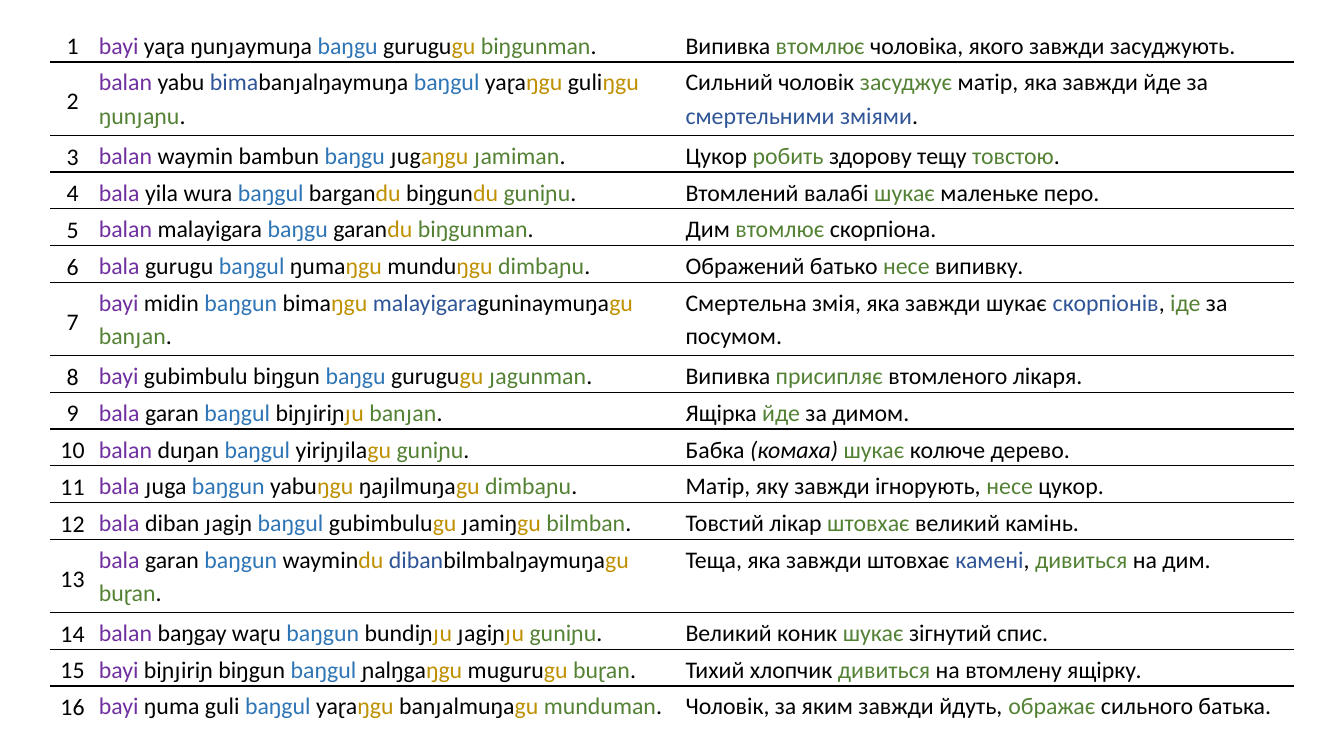
from lxml.etree import SubElement
from pptx import Presentation
from pptx.dml.color import RGBColor
from pptx.enum.text import MSO_ANCHOR as ANCHOR, PP_ALIGN as ALIGN
from pptx.oxml import parse_xml
from pptx.oxml.ns import nsdecls, qn
from pptx.util import Inches, Pt

COLORS = {
    "class": "7030A0",
    "agent": "2E75B6",
    "case": "BF9000",
    "verb": "548235",
    "object": "2F5597",
}
NO_STYLE = "{2D5ABB26-0587-4C30-8999-92F81FD0307C}"
COLUMNS = (0.44, 5.82, 6.07)
CELL_FORMAT = {
    "margin_left": Inches(0.04),
    "margin_right": Inches(0.04),
    "margin_top": Inches(0.02),
    "margin_bottom": 0,
}
PARAGRAPH_FORMAT = {"line_spacing": 1.15, "space_before": Pt(0), "space_after": Pt(2)}
FONT_FORMAT = {"name": "Calibri", "size": Pt(17)}

SENTENCES = [
    (1, "[class:bayi ]yaɽa ŋunɟaymuŋa [agent:baŋgu ]gurugu[case:gu ][verb:biŋgunman].",
     "Випивка [verb:втомлює] чоловіка, якого завжди засуджують."),
    (2, "[class:balan ]yabu [object:bima]banɟalŋaymuŋa [agent:baŋgul ]yaɽa[case:ŋgu ]"
        "guli[case:ŋgu ][verb:ŋunɟaɲu].",
     "Сильний чоловік [verb:засуджує] матір, яка завжди йде за [object:смертельними зміями]."),
    (1, "[class:balan ]waymin bambun [agent:baŋgu ]ɟug[case:aŋgu ][verb:ɟamiman].",
     "Цукор [verb:робить] здорову тещу [verb:товстою]."),
    (1, "[class:bala ]yila wura [agent:baŋgul ]bargan[case:du ]biŋgun[case:du ][verb:guniɲu].",
     "Втомлений валабі [verb:шукає] маленьке перо."),
    (1, "[class:balan ]malayigara [agent:baŋgu ]garan[case:du ][verb:biŋgunman].",
     "Дим [verb:втомлює] скорпіона."),
    (1, "[class:bala ]gurugu [agent:baŋgul ]ŋuma[case:ŋgu ]mundu[case:ŋgu ][verb:dimbaɲu].",
     "Ображений батько [verb:несе] випивку."),
    (2, "[class:bayi ]midin [agent:baŋgun ]bima[case:ŋgu ][object:malayigara]guninaymuŋa"
        "[case:gu ][verb:banɟan].",
     "Смертельна змія, яка завжди шукає [object:скорпіонів], [verb:іде] за посумом."),
    (1, "[class:bayi ]gubimbulu biŋgun [agent:baŋgu ]gurugu[case:gu ][verb:ɟagunman].",
     "Випивка [verb:присипляє] втомленого лікаря."),
    (1, "[class:bala ]garan [agent:baŋgul ]biɲɟiriɲ[case:ɟu ][verb:banɟan].",
     "Ящірка [verb:йде] за димом."),
    (1, "[class:balan ]duŋan [agent:baŋgul ]yiriɲɟila[case:gu ][verb:guniɲu].",
     "Бабка [italic:(комаха) ][verb:шукає] колюче дерево."),
    (1, "[class:bala ]ɟuga [agent:baŋgun ]yabu[case:ŋgu ]ŋaɟilmuŋa[case:gu ][verb:dimbaɲu].",
     "Матір, яку завжди ігнорують, [verb:несе ]цукор."),
    (1, "[class:bala ]diban ɟagiɲ [agent:baŋgul ]gubimbulu[case:gu ]ɟamiŋ[case:gu ]"
        "[verb:bilmban].",
     "Товстий лікар [verb:штовхає] великий камінь."),
    (2, "[class:bala ]garan [agent:baŋgun ]waymin[case:du ][object:diban]bilmbalŋaymuŋa"
        "[case:gu ][verb:buɽan].",
     "Теща, яка завжди штовхає [object:камені], [verb:дивиться] на дим."),
    (1, "[class:balan ]baŋgay waɽu [agent:baŋgun ]bundiɲ[case:ɟu ]ɟagiɲ[case:ɟu ]"
        "[verb:guniɲu].",
     "Великий коник [verb:шукає] зігнутий спис."),
    (1, "[class:bayi ]biɲɟiriɲ biŋgun [agent:baŋgul ]ɲalŋga[case:ŋgu ]muguru[case:gu ]"
        "[verb:buɽan].",
     "Тихий хлопчик [verb:дивиться] на втомлену ящірку."),
    (1, "[class:bayi ]ŋuma guli [agent:baŋgul ]yaɽa[case:ŋgu ]banɟalmuŋa[case:gu ]"
        "[verb:munduman].",
     "Чоловік, за яким завжди йдуть, [verb:ображає] сильного батька."),
]


def rgb(color):
    """Turn a hex string into a colour."""
    return RGBColor.from_string(color)


def apply_format(target, values):
    """Set every attribute in a dict of format values."""
    for name, value in values.items():
        setattr(target, name, value)


def split_marks(text):
    """Yield the role and wording of each part of a marked sentence."""
    for i, part in enumerate(text.replace("]", "[").split("[")):
        if part:
            role, _, words = part.partition(":") if i % 2 else ("", "", part)
            yield role, words


def fill_cell(cell, text, align):
    """Write a marked sentence into a table cell."""
    apply_format(cell, CELL_FORMAT)
    cell.fill.background()
    p = cell.text_frame.paragraphs[0]
    apply_format(p, PARAGRAPH_FORMAT)
    p.alignment = align
    for role, words in split_marks(text):
        r = p.add_run()
        r.text = words
        apply_format(r.font, FONT_FORMAT)
        r.font.color.rgb = rgb(COLORS.get(role, "000000"))
        if role == "italic":
            r.font.italic = True


def rule_edge(cell, tag, color="000000", width=1):
    """Draw a line along one edge of a cell."""
    ln = parse_xml(f'<a:{tag} {nsdecls("a")} w="{Pt(width)}"/>')
    fill = SubElement(ln, qn("a:solidFill"))
    SubElement(fill, qn("a:srgbClr"), val=color)
    cell._tc.get_or_add_tcPr().insert(0, ln)


def add_sentence_table(slide, left, top, width, height):
    """Place the numbered sentences and their translations in a box."""
    sp = slide.shapes.add_table(len(SENTENCES), len(COLUMNS), left, top, width, height)
    table = sp.table
    apply_format(table, {"first_row": False, "horz_banding": False})
    table._tbl.tblPr.find(qn("a:tableStyleId")).text = NO_STYLE
    for column, share in zip(table.columns, COLUMNS):
        column.width = int(width * share / sum(COLUMNS))
    line_height = height / sum(lines for lines, *_ in SENTENCES)
    last = len(SENTENCES) - 1
    for i, (lines, sentence, translation) in enumerate(SENTENCES):
        row = table.rows[i]
        row.height = int(lines * line_height)
        number, *texts = row.cells
        fill_cell(number, str(i + 1), ALIGN.CENTER)
        number.vertical_anchor = ANCHOR.MIDDLE
        for cell, text in zip(texts, (sentence, translation)):
            fill_cell(cell, text, ALIGN.LEFT)
        for cell in row.cells:
            if i < last:
                rule_edge(cell, "lnB")
            if i > 0:
                rule_edge(cell, "lnT")


def main():
    """Build and save the slide."""
    prs = Presentation()
    apply_format(prs, {"slide_width": Inches(13.33), "slide_height": Inches(7.5)})
    s = prs.slides.add_slide(prs.slide_layouts[6])
    add_sentence_table(s, Inches(0.5), Inches(0.25), Inches(12.33), Inches(6.92))
    prs.save("out.pptx")


if __name__ == "__main__":
    main()
